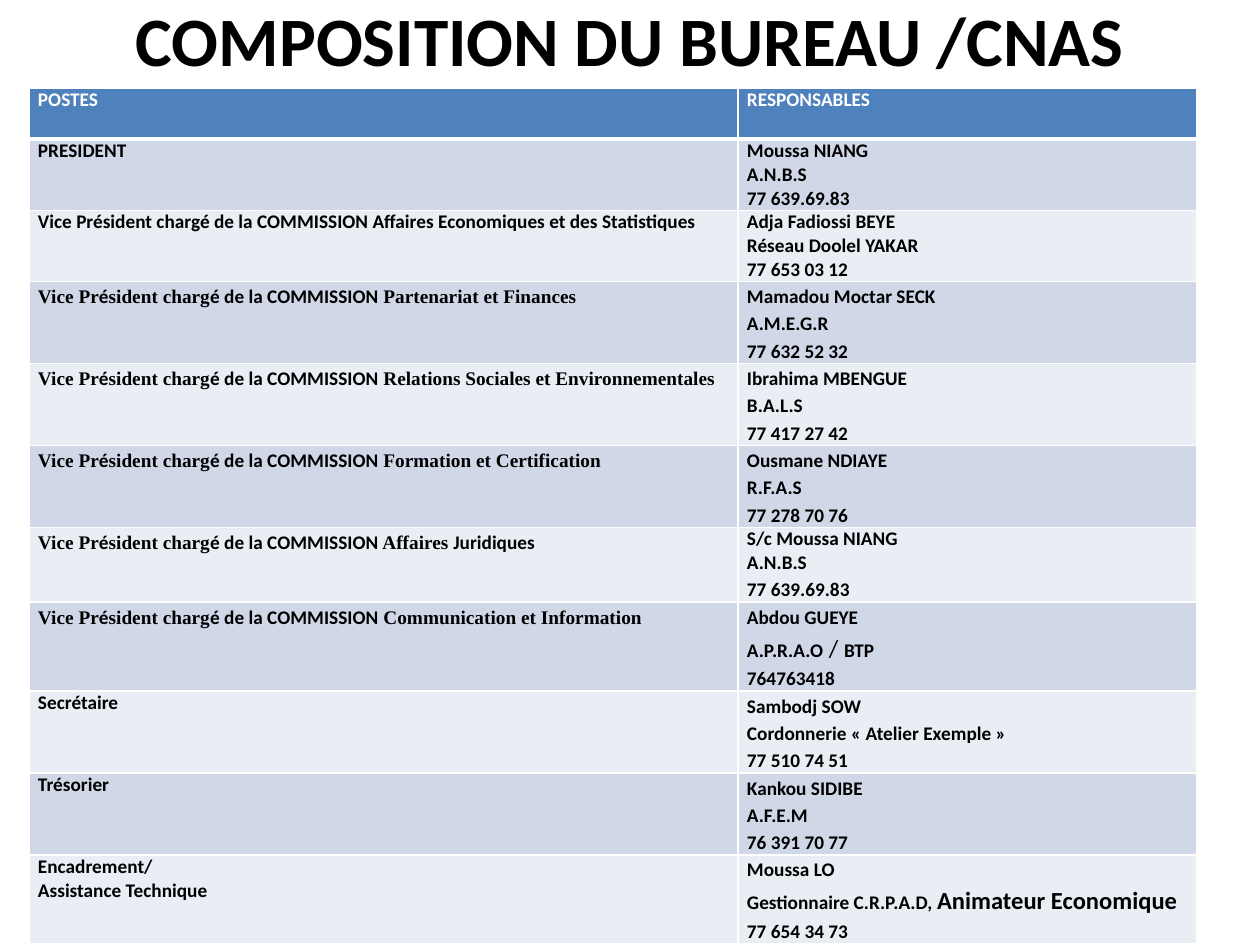
from dataclasses import dataclass

from lxml import etree
from pptx import Presentation
from pptx import util as u
from pptx.dml.color import RGBColor
from pptx.enum import text
from pptx.oxml import ns

EMU_PER_PX = 914400 // 126


@dataclass(frozen=True)
class Theme:
    sans: str = "Calibri"
    serif: str = "Times New Roman"
    title_size: float = 39.6
    body_size: int = 11
    large_size: int = 14
    ink: str = "000000"
    header_ink: str = "FFFFFF"
    header_fill: str = "4F81BD"
    header_rule: str = "FFFFFF"
    header_rule_width: int = 3
    band_fills: tuple = ("D0D8E8", "E9EDF4")
    loose: float = 1.15


THEME = Theme()
SERIF = {"name": THEME.serif}
LARGE = {"size": u.Pt(THEME.large_size)}
LARGE_LIGHT = {**LARGE, "bold": False}


def vice_president(*subject):
    """Runs of a post title whose plain letters are serif and the rest sans."""
    return [[("Vice Pr", SERIF), ("é", {}), ("sident charg", SERIF),
             ("é de la COMMISSION", {}), *subject]]


# A paragraph is a string, or a list of (text, font overrides) runs.
TITLE = "COMPOSITION DU BUREAU /CNAS"
HEADER = ("POSTES", "RESPONSABLES")
# Post, its line spacing, person in charge, line spacing of each of those lines
OFFICERS = [
    (["PRESIDENT"], 1,
     ["Moussa NIANG", "A.N.B.S", "77 639.69.83"], (1, 1, 1)),
    (["Vice Président chargé de la COMMISSION Affaires Economiques et des Statistiques"], 1,
     ["Adja Fadiossi BEYE", "Réseau Doolel YAKAR", "77 653 03 12"], (1, 1, 1)),
    (vice_president((" Partenariat et Finances", SERIF)), THEME.loose,
     ["Mamadou Moctar SECK", "A.M.E.G.R", "77 632 52 32"], (THEME.loose,) * 3),
    (vice_president((" Relations Sociales et Environnementales", SERIF)), THEME.loose,
     ["Ibrahima MBENGUE", "B.A.L.S", "77 417 27 42"], (THEME.loose,) * 3),
    (vice_president((" Formation et Certification", SERIF)), THEME.loose,
     ["Ousmane NDIAYE", "R.F.A.S", "77 278 70 76"], (THEME.loose,) * 3),
    (vice_president((" Affaires ", SERIF), ("Juridiques", {})), THEME.loose,
     ["S/c Moussa NIANG", "A.N.B.S", "77 639.69.83"], (1, 1, THEME.loose)),
    (vice_president((" Communication et Information", SERIF)), THEME.loose,
     ["Abdou GUEYE", [("A.P.R.A.O", {}), (" / ", LARGE_LIGHT), ("BTP", {})],
      "764763418"], (THEME.loose,) * 3),
    (["Secrétaire"], 1,
     ["Sambodj SOW", "Cordonnerie « Atelier Exemple »", "77 510 74 51"],
     (THEME.loose,) * 3),
    (["Trésorier"], 1,
     ["Kankou SIDIBE", "A.F.E.M", "76 391 70 77"], (THEME.loose,) * 3),
    (["Encadrement/", "Assistance Technique"], 1,
     ["Moussa LO",
      [("Gestionnaire C.R.P.A.D, ", {}), ("Animateur Economique", LARGE)],
      "77 654 34 73"], (THEME.loose,) * 3),
]

SLIDE_SIZE = (1260, 945)
TITLE_BOX = (63, 0, 1134, 78)
TABLE_LEFT, TABLE_TOP = 29, 88
COLUMN_WIDTHS = (709, 459)
ROW_HEIGHT = 51
CELL_PADDING = 9


def px(length):
    return u.Emu(length * EMU_PER_PX)


def style_font(font, size, color):
    font.name = THEME.sans
    font.size = u.Pt(size)
    font.bold = True
    font.color.rgb = RGBColor.from_string(color)


def fill_cell(cell, paragraphs, spacings, fill, color):
    cell.fill.solid()
    cell.fill.fore_color.rgb = RGBColor.from_string(fill)
    cell.margin_left = cell.margin_right = px(CELL_PADDING)
    cell.margin_top = cell.margin_bottom = 0
    frame = cell.text_frame
    for index, (content, spacing) in enumerate(zip(paragraphs, spacings)):
        paragraph = frame.add_paragraph() if index else frame.paragraphs[0]
        paragraph.line_spacing = float(spacing)
        style_font(paragraph.font, THEME.body_size, color)
        runs = [(content, {})] if isinstance(content, str) else content
        for words, overrides in runs:
            run = paragraph.add_run()
            run.text = words
            style_font(run.font, THEME.body_size, color)
            for attribute, value in overrides.items():
                setattr(run.font, attribute, value)


def rule_below(cell):
    """Draw the thick rule under a header cell."""
    line = etree.Element(ns.qn("a:lnB"), w=str(u.Pt(THEME.header_rule_width)))
    solid = etree.SubElement(line, ns.qn("a:solidFill"))
    etree.SubElement(solid, ns.qn("a:srgbClr"), val=THEME.header_rule)
    cell._tc.get_or_add_tcPr().insert(0, line)


def add_title(slide):
    title = slide.shapes.title
    title.left, title.top, title.width, title.height = map(px, TITLE_BOX)
    frame = title.text_frame
    frame.text = TITLE
    frame.vertical_anchor = text.MSO_ANCHOR.MIDDLE
    paragraph = frame.paragraphs[0]
    paragraph.alignment = text.PP_ALIGN.CENTER
    style_font(paragraph.font, THEME.title_size, THEME.ink)


def add_officers_table(slide):
    row_count = len(OFFICERS) + 1
    table = slide.shapes.add_table(
        row_count, len(COLUMN_WIDTHS), px(TABLE_LEFT), px(TABLE_TOP),
        px(sum(COLUMN_WIDTHS)), px(ROW_HEIGHT * row_count)).table
    for column, width in zip(table.columns, COLUMN_WIDTHS):
        column.width = px(width)
    for column, label in enumerate(HEADER):
        cell = table.cell(0, column)
        fill_cell(cell, [label], [1], THEME.header_fill, THEME.header_ink)
        rule_below(cell)
    for index, (post, post_spacing, person, person_spacings) in enumerate(OFFICERS):
        fill = THEME.band_fills[index % 2]
        fill_cell(table.cell(index + 1, 0), post, [post_spacing] * len(post),
                  fill, THEME.ink)
        fill_cell(table.cell(index + 1, 1), person, person_spacings,
                  fill, THEME.ink)


def main():
    presentation = Presentation()
    presentation.slide_width, presentation.slide_height = map(px, SLIDE_SIZE)
    slide = presentation.slides.add_slide(presentation.slide_layouts[5])
    add_title(slide)
    add_officers_table(slide)
    presentation.save("out.pptx")


if __name__ == "__main__":
    main()
